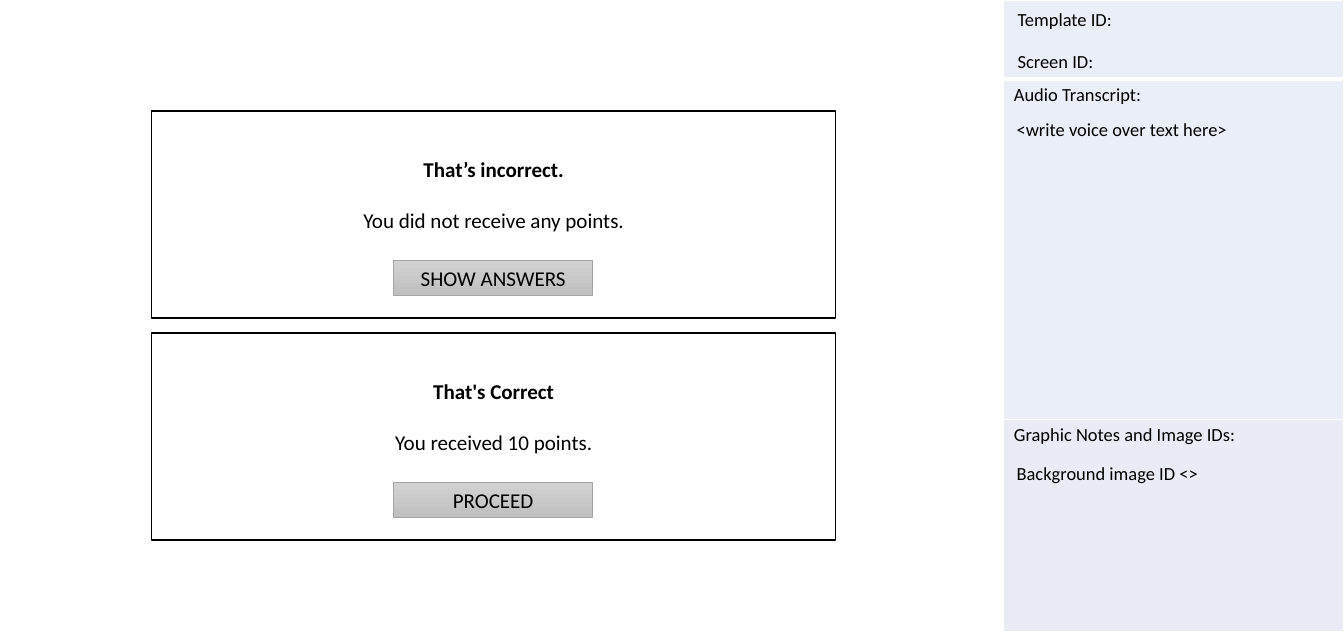
from lxml import etree
from pptx import Presentation
from pptx.dml.color import RGBColor
from pptx.enum.shapes import MSO_SHAPE as Shape
from pptx.enum.text import MSO_ANCHOR as Anchor, PP_ALIGN as Align
from pptx.oxml.ns import qn
from pptx.util import Inches, Pt


def color(code):
    return RGBColor.from_string(code)


def assign(item, values):
    for name, value in values.items():
        setattr(item, name, value)


class Board:
    font = "Calibri"
    ink = "000000"
    small, large = 14, 16

    def __init__(self, slide):
        self.slide = slide

    def add_text(self, para, text, size, bold=False):
        run = para.add_run()
        run.text = text
        assign(run.font, {"name": self.font, "size": Pt(size), "bold": bold})
        run.font.color.rgb = color(self.ink)

    def label(self, text, left, top, width):
        box = self.slide.shapes.add_textbox(
            Inches(left), Inches(top), Inches(width), Inches(0.34))
        box.text_frame.word_wrap = True
        self.add_text(box.text_frame.paragraphs[0], text, self.small)

    def rect(self, place, line, weight, frame):
        shape = self.slide.shapes.add_shape(
            Shape.RECTANGLE, *[Inches(n) for n in place])
        shape.shadow.inherit = False
        shape.line.color.rgb = color(line)
        shape.line.width = Pt(weight)
        assign(shape.text_frame, {"word_wrap": True, **frame})
        return shape

    def panel(self, top, head, body):
        pad = Inches(0.21)
        shape = self.rect((1.6, top, 7.21, 2.18), self.ink, 1, {
            "vertical_anchor": Anchor.TOP, "margin_top": Inches(0.48),
            "margin_left": pad, "margin_right": pad, "margin_bottom": pad})
        shape.fill.solid()
        shape.fill.fore_color.rgb = color("FFFFFF")
        first = shape.text_frame.paragraphs[0]
        second = shape.text_frame.add_paragraph()
        first.alignment = Align.CENTER
        assign(second, {"alignment": Align.CENTER, "space_before": Pt(19.5)})
        self.add_text(first, head, self.large, True)
        self.add_text(second, body, self.large)

    def button(self, top, text):
        shape = self.rect((4.15, top, 2.1, 0.37), "A5A5A5", 0.5, {
            "vertical_anchor": Anchor.MIDDLE,
            "margin_left": 0, "margin_right": 0})
        shape.fill.gradient()
        shape.fill.gradient_angle = 270
        for stop, code in zip(shape.fill.gradient_stops, ("D2D2D2", "C0C0C0")):
            stop.color.rgb = color(code)
        para = shape.text_frame.paragraphs[0]
        para.alignment = Align.CENTER
        self.add_text(para, text, self.large)

    def border(self, cell, side, weight):
        props = cell._tc.get_or_add_tcPr()
        line = etree.SubElement(props, qn(f"a:ln{side}"), w=str(Pt(weight)))
        fill = etree.SubElement(line, qn("a:solidFill"))
        etree.SubElement(fill, qn("a:srgbClr"), val="FFFFFF")

    def table(self, left, width, rows):
        total = sum(row[0] for row in rows)
        table = self.slide.shapes.add_table(
            len(rows), 1, Inches(left), 0, Inches(width), Inches(total)).table
        assign(table, {"first_row": False, "horz_banding": False})
        above = 1
        for i, (height, text, fill, below) in enumerate(rows):
            table.rows[i].height = Inches(height)
            cell = table.cell(i, 0)
            assign(cell, {"margin_left": Inches(0.11),
                          "margin_right": Inches(0.11)})
            for side, weight in zip("LRTB", (1, 1, above, below)):
                self.border(cell, side, weight)
            above = below
            cell.fill.solid()
            cell.fill.fore_color.rgb = color(fill)
            if text:
                para = cell.text_frame.paragraphs[0]
                self.add_text(para, text, self.small)


def main():
    deck = Presentation()
    assign(deck, {"slide_width": Inches(14.17), "slide_height": Inches(6.69)})
    board = Board(deck.slides.add_slide(deck.slide_layouts[6]))

    # Side column
    board.table(10.58, 3.59, [
        (0.83, "", "EAEFF7", 3),
        (3.59, "Audio Transcript:", "EAEFF7", 1),
        (2.23, "Graphic Notes and Image IDs:", "E9EBF5", 1)])
    for text, left, top, width in (
            ("Template ID:", 10.63, 0.04, 3.82),
            ("Screen ID:", 10.63, 0.48, 3.82),
            ("<write voice over text here>", 10.62, 1.19, 3.56),
            ("Background image ID <>", 10.62, 4.82, 3.56)):
        board.label(text, left, top, width)

    # Feedback panels with their buttons
    for i, (head, body, action) in enumerate((
            ("That’s incorrect.", "You did not receive any points.",
             "SHOW ANSWERS"),
            ("That's Correct", "You received 10 points.", "PROCEED"))):
        top = 1.17 + i * 2.34
        board.panel(top, head, body)
        board.button(top + 1.57, action)

    deck.save("out.pptx")


if __name__ == "__main__":
    main()
